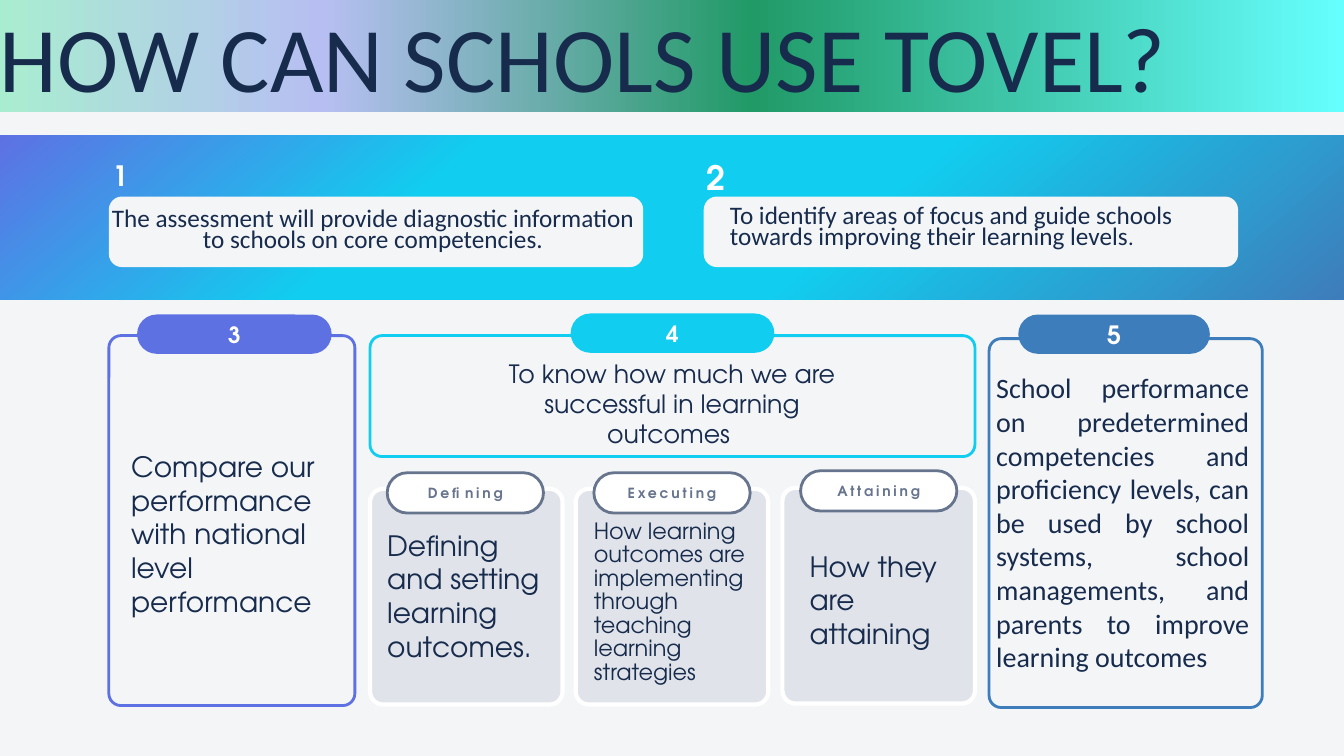
from dataclasses import dataclass
from typing import NamedTuple, Optional

from lxml.etree import SubElement
from pptx import Presentation
from pptx.dml.color import RGBColor
from pptx.enum.shapes import MSO_SHAPE as Shape
from pptx.enum.text import MSO_ANCHOR as Anchor, PP_ALIGN as Align
from pptx.oxml.ns import qn
from pptx.util import Emu, Pt

PX = 9144  # EMU per px, 100 px to the inch


class Box(NamedTuple):
    x: int
    y: int
    w: int
    h: int


@dataclass(frozen=True)
class Theme:
    sans: str = "Calibri"
    geometric: str = "TeX Gyre Adventor"
    paper: str = "F4F5F7"
    ink: str = "172B4D"
    white: str = "FFFFFF"
    card: str = "E0E3E9"
    slate: str = "67748E"
    violet: str = "5E71E3"
    cyan: str = "11CDEF"
    blue: str = "3E7DBB"
    title_size: int = 66
    big: int = 24
    body: int = 20
    medium: int = 18
    small: int = 16
    tag: int = 10


T = Theme()


@dataclass(frozen=True)
class Text:
    words: str
    size: int = T.body
    font: str = T.geometric
    color: str = T.ink
    align: Align = Align.LEFT
    leading: Optional[float] = None
    badge: bool = False  # bold and letter-spaced
    ending: str = ""  # closing run in the small size


@dataclass(frozen=True)
class Statement:
    """A numbered white bar on the gradient band."""
    x: int
    number: Text
    number_box: Box
    text: Text
    text_box: Box


@dataclass(frozen=True)
class Panel:
    """An outlined frame with a numbered pill on its top edge."""
    frame: Box
    pill: Box
    number: str
    number_size: int
    color: str
    text: Text
    text_box: Box


@dataclass(frozen=True)
class Card:
    x: int
    y: int
    pill_x: int
    pill_y: int
    tag: str
    text: Text
    text_box: Box


STATEMENTS = [
    Statement(108, Text("1", T.body, color=T.white, badge=True), Box(96, 154, 215, 39),
              Text("The assessment will provide diagnostic information to schools on "
                   "core competencies.", T.medium, T.sans, align=Align.CENTER, leading=14.8),
              Box(105, 210, 530, 43)),
    Statement(698, Text("2", T.big, color=T.white, badge=True), Box(685, 156, 215, 39),
              Text("To identify areas of focus and guide schools towards improving "
                   "their learning levels", T.medium, T.sans, leading=14.8, ending="."),
              Box(724, 207, 449, 43)),
]
PANELS = [
    Panel(Box(108, 333, 244, 367), Box(136, 312, 193, 39), "3", T.small, T.violet,
          Text("Compare our performance with national level performance"),
          Box(130, 446, 205, 168)),
    Panel(Box(367, 333, 600, 120), Box(566, 311, 202, 39), "4", T.small, T.cyan,
          Text("To know how much we are successful in learning outcomes ",
               T.medium, align=Align.CENTER),
          Box(482, 355, 369, 91)),
    Panel(Box(981, 336, 271, 366), Box(1010, 312, 190, 39), "5", T.medium, T.blue,
          Text("School performance on predetermined competencies and proficiency levels, "
               "can be used by school systems, school managements, and parents to improve "
               "learning outcomes", font=T.sans, align=Align.JUSTIFY),
          Box(988, 368, 251, 303)),
]
CARDS = [
    Card(367, 485, 384, 469, "Defining", Text("Defining and setting learning outcomes."),
         Box(384, 524, 166, 135)),
    Card(571, 485, 589, 469, "Executing",
         Text("How learning outcomes are implementing through teaching learning strategies",
              T.small, leading=16.8), Box(589, 516, 166, 165)),
    Card(776, 484, 794, 467, "Attaining", Text("How they are attaining"),
         Box(803, 545, 143, 101)),
]
BAND_STOPS = [(0, T.violet), (32, T.cyan), (62, T.cyan), (100, T.blue)]
TITLE_STOPS = [(0, "66FFFF"), (44, "219A67"), (76, "B7BFF2"), (100, "A9EDD0")]


def emu(box: Box) -> list[Emu]:
    return [Emu(v * PX) for v in box]


def write(tf, text: Text) -> None:
    tf.word_wrap = True
    p = tf.paragraphs[0]
    p.alignment = text.align
    if text.leading:
        p.line_spacing = Pt(text.leading)
    p.font.name, p.font.bold = text.font, text.badge
    p.font.size = Pt(text.size)
    p.font.color.rgb = RGBColor.from_string(text.color)
    r = p.add_run()
    r.text = text.words
    if text.badge:
        r._r.get_or_add_rPr().set("spc", "200")
    if text.ending:
        r = p.add_run()
        r.text = text.ending
        r.font.size = Pt(T.small)


def clear_insets(tf) -> None:
    tf.margin_left = tf.margin_top = tf.margin_right = tf.margin_bottom = 0
    tf.vertical_anchor = Anchor.TOP


def add_text(s, box: Box, text: Text) -> None:
    tf = s.shapes.add_textbox(*emu(box)).text_frame
    clear_insets(tf)
    write(tf, text)


def add_block(s, box: Box, radius: float, fill: Optional[str] = None,
              line: Optional[str] = None, width: int = 2, text: Optional[Text] = None):
    """Add a rounded rectangle whose corner radius is given in px."""
    sp = s.shapes.add_shape(Shape.ROUNDED_RECTANGLE, *emu(box))
    sp.adjustments[0] = radius / min(box.w, box.h)
    sp.shadow.inherit = False
    if fill:
        sp.fill.solid()
        sp.fill.fore_color.rgb = RGBColor.from_string(fill)
    else:
        sp.fill.background()
    if line:
        sp.line.color.rgb = RGBColor.from_string(line)
        sp.line.width = Pt(width)
    else:
        sp.line.fill.background()
    if text:
        write(sp.text_frame, text)
    return sp


def add_pill(s, box: Box, text: Text, fill: Optional[str] = None,
             line: Optional[str] = None) -> None:
    add_block(s, box, box.h / 2, fill, line, text=text)


def set_gradient(sp, stops: list[tuple[int, str]], angle: int) -> None:
    """Fill with colour stops in percent; the angle runs clockwise."""
    sp.fill.gradient()
    sp.fill.gradient_angle = 360 - angle
    stop_list = sp._element.spPr.find(qn("a:gradFill")).find(qn("a:gsLst"))
    for gs in list(stop_list):
        stop_list.remove(gs)
    for percent, color in stops:
        gs = SubElement(stop_list, qn("a:gs"), pos=str(percent * 1000))
        SubElement(gs, qn("a:srgbClr"), val=color)


def set_opacity(sp, percent: int) -> None:
    color = sp._element.spPr.find(qn("a:solidFill")).find(qn("a:srgbClr"))
    SubElement(color, qn("a:alpha"), val=str(percent * 1000))


def add_statement(s, st: Statement) -> None:
    add_block(s, Box(st.x, 195, 530, 70), 13, T.paper)
    add_pill(s, st.number_box, st.number)
    add_text(s, st.text_box, st.text)


def add_panel(s, panel: Panel) -> None:
    set_opacity(add_block(s, panel.frame, 12, T.paper, panel.color), 60)
    number = Text(panel.number, panel.number_size, color=T.white, align=Align.CENTER, badge=True)
    add_pill(s, panel.pill, number, panel.color)
    add_text(s, panel.text_box, panel.text)


def add_card(s, card: Card) -> None:
    add_block(s, Box(card.x, card.y, 191, 214), 13, T.card, T.white, 3)
    add_text(s, card.text_box, card.text)
    tag = Text(card.tag, T.tag, color=T.slate, align=Align.CENTER, badge=True)
    add_pill(s, Box(card.pill_x, card.pill_y, 155, 40), tag, T.white, T.slate)


def main() -> None:
    prs = Presentation()
    prs.slide_width, prs.slide_height = Emu(1333 * PX), Emu(750 * PX)
    s = prs.slides.add_slide(prs.slide_layouts[6])
    s.background.fill.solid()
    s.background.fill.fore_color.rgb = RGBColor.from_string(T.paper)

    set_gradient(add_block(s, Box(0, 134, 1333, 163), 0), BAND_STOPS, 50)
    title = add_block(s, Box(0, 0, 1333, 111), 0,
                      text=Text("HOW CAN SCHOLS USE TOVEL?", T.title_size, T.sans))
    clear_insets(title.text_frame)
    set_gradient(title, TITLE_STOPS, 180)

    for statement in STATEMENTS:
        add_statement(s, statement)
    for panel in PANELS:
        add_panel(s, panel)
    for card in CARDS:
        add_card(s, card)
    prs.save("out.pptx")


if __name__ == "__main__":
    main()
